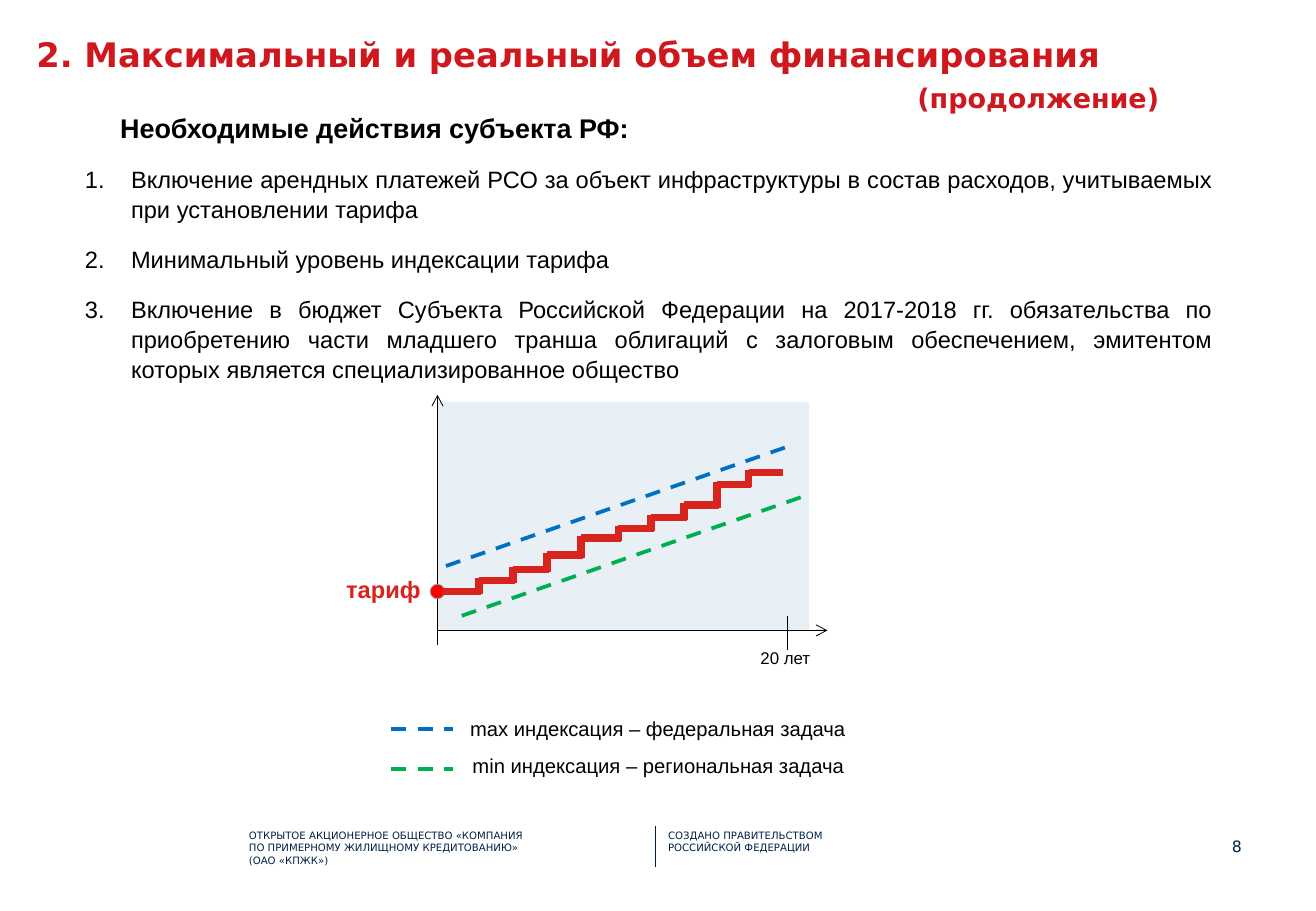
from dataclasses import dataclass

from lxml import etree
from pptx import Presentation
from pptx import util as u
from pptx.dml.color import RGBColor
from pptx.enum import dml, shapes, text
from pptx.oxml.ns import qn

SCALE = 9144  # EMU in one px


@dataclass(frozen=True)
class Theme:
    title: str = "CE181E"
    ink: str = "000000"
    footer: str = "002046"
    tariff: str = "D9231D"
    dot: str = "FF0000"
    dot_edge: str = "9B9EA3"
    plot: str = "DEEAF2"
    maximum: str = "0070C0"
    minimum: str = "00B050"
    body_font: str = "Arial"
    brand_font: str = "DejaVu Sans"
    title_size: int = 20
    heading_size: int = 16
    body_size: int = 14
    legend_size: int = 12
    label_size: int = 10
    footer_size: int = 6
    thin: float = 0.5
    dashed: float = 2.25
    thick: float = 4.5


THEME = Theme()


def px(value):
    return u.Emu(value * SCALE)


def add_box(page, x, y, width, height, inset=True):
    box = page.shapes.add_textbox(px(x), px(y), px(width), px(height))
    frame = box.text_frame
    frame.word_wrap = True
    if not inset:
        frame.margin_left = frame.margin_right = 0
        frame.margin_top = frame.margin_bottom = 0
    return frame


def add_span(para, words, size, color=THEME.ink, font=THEME.body_font, bold=False):
    span = para.add_run()
    span.text = words
    span.font.size = u.Pt(size)
    span.font.name = font
    span.font.bold = bold
    span.font.color.rgb = RGBColor.from_string(color)
    return span


def add_label(page, x, y, width, height, words, size, **style):
    para = add_box(page, x, y, width, height).paragraphs[0]
    add_span(para, words, size, **style)
    return para


def add_line(page, start, end, color, weight, dashed=False, arrow=False):
    line = page.shapes.add_connector(
        shapes.MSO_CONNECTOR.STRAIGHT, *map(px, (*start, *end)))
    line.line.color.rgb = RGBColor.from_string(color)
    line.line.width = u.Pt(weight)
    if dashed:
        line.line.dash_style = dml.MSO_LINE.DASH
    if arrow:
        etree.SubElement(line.line._get_or_add_ln(), qn("a:tailEnd"), type="arrow")
    etree.SubElement(line._element.spPr, qn("a:effectLst"))


def add_title(page, x, y, width, height):
    frame = add_box(page, x, y, width, height, inset=False)
    style = dict(color=THEME.title, font=THEME.brand_font, bold=True)
    add_span(frame.paragraphs[0], "2. Максимальный и реальный объем финансирования",
             THEME.title_size, **style)
    para = frame.add_paragraph()
    para.alignment = text.PP_ALIGN.RIGHT
    para.space_before = u.Pt(4)
    add_span(para, "(продолжение)", THEME.heading_size, **style)


def add_actions(page, x, y, width, height):
    add_label(page, x + 29, y, 671, 37, "Необходимые действия субъекта РФ:",
              THEME.heading_size, bold=True)
    actions = (
        "Включение арендных платежей РСО за объект инфраструктуры в состав "
        "расходов, учитываемых при установлении тарифа",
        "Минимальный уровень индексации тарифа",
        "Включение в бюджет Субъекта Российской Федерации на 2017-2018 гг. "
        "обязательства по приобретению части младшего транша облигаций с залоговым "
        "обеспечением, эмитентом которых является специализированное общество",
    )
    frame = add_box(page, x, y + 43, width, height - 43)
    for index, action in enumerate(actions):
        para = frame.add_paragraph() if index else frame.paragraphs[0]
        props = para._p.get_or_add_pPr()
        props.set("marL", str(px(38)))
        props.set("indent", str(-px(38)))
        etree.SubElement(props, qn("a:buFont"), typeface="+mj-lt")
        etree.SubElement(props, qn("a:buAutoNum"), type="arabicPeriod")
        para.alignment = text.PP_ALIGN.JUSTIFY
        para.line_spacing = 1.05
        para.space_before = u.Pt(6 if index else 0)
        para.space_after = u.Pt(6)
        add_span(para, action, THEME.body_size)


def add_steps(page, x, y):
    """Draw the tariff staircase: one tread per level, one riser between levels."""
    levels = (156, 147, 138, 126, 112, 104, 95, 85, 68, 58)
    edges = (4, 34, 62, 90, 118, 149, 176, 203, 230, 256, 284)
    overlap = 2
    for index, level in enumerate(levels):
        left, right = x + edges[index], x + edges[index + 1]
        last = index == len(levels) - 1
        add_line(page, (left, y + level), (right + (0 if last else overlap), y + level),
                 THEME.tariff, THEME.thick)
        if not last:
            add_line(page, (right, y + levels[index + 1] - overlap),
                     (right, y + level + overlap), THEME.tariff, THEME.thick)


def add_plain_shape(page, kind, x, y, width, height, color):
    shape = page.shapes.add_shape(kind, px(x), px(y), px(width), px(height))
    shape.shadow.inherit = False
    shape.fill.solid()
    shape.fill.fore_color.rgb = RGBColor.from_string(color)
    shape.line.fill.background()
    return shape


def add_tariff_plot(page, x, y, width, height):
    bottom = y + height
    area = add_plain_shape(page, shapes.MSO_SHAPE.RECTANGLE, x, y, width, height, THEME.plot)
    color = area._element.spPr.find(qn("a:solidFill"))[0]
    etree.SubElement(color, qn("a:alpha"), val="67000")

    add_line(page, (x, bottom), (x + 321, bottom), THEME.ink, THEME.thin, arrow=True)
    add_line(page, (x, bottom + 12), (x, y - 6), THEME.ink, THEME.thin, arrow=True)
    add_line(page, (x + 288, bottom - 12), (x + 288, bottom + 16), THEME.ink, THEME.thin)
    add_label(page, x + 256, bottom + 9, 68, 27, "20 лет", THEME.label_size)

    dot = add_plain_shape(page, shapes.MSO_SHAPE.OVAL, x - 6, y + 150, 12, 12, THEME.dot)
    dot.line.color.rgb = RGBColor.from_string(THEME.dot_edge)
    dot.line.width = u.Pt(THEME.thin)
    add_steps(page, x, y)
    for left, top, color in ((20, 176, THEME.minimum), (7, 135, THEME.maximum)):
        add_line(page, (x + left, y + top), (x + left + 286, y + top - 100),
                 color, THEME.dashed, dashed=True)
    add_label(page, x - 85, y + 137, 95, 34, "тариф", THEME.body_size,
              color=THEME.tariff, bold=True)


def add_legend(page, x, y):
    entries = (
        (0, 55, 15, "max индексация – федеральная задача", THEME.maximum),
        (30, 57, 18, "min индексация – региональная задача", THEME.minimum),
    )
    for top, indent, middle, words, color in entries:
        add_label(page, x + indent, y + top, 346, 30, words, THEME.legend_size)
        add_line(page, (x, y + top + middle), (x + 51, y + top + middle),
                 color, THEME.dashed, dashed=True)


def add_footer(page, x, y):
    style = dict(color=THEME.footer, font=THEME.brand_font)
    notes = (
        (0, 245, 42, "ОТКРЫТОЕ АКЦИОНЕРНОЕ ОБЩЕСТВО «КОМПАНИЯ ПО ПРИМЕРНОМУ "
                     "ЖИЛИЩНОМУ КРЕДИТОВАНИЮ» (ОАО «КПЖК»)"),
        (345, 196, 31, "СОЗДАНО ПРАВИТЕЛЬСТВОМ РОССИЙСКОЙ ФЕДЕРАЦИИ"),
    )
    for left, width, height, words in notes:
        para = add_label(page, x + left, y, width, height, words,
                         THEME.footer_size, **style)
        para.line_spacing = 1.05
    add_line(page, (x + 344, y + 3), (x + 344, y + 37), THEME.footer, THEME.thin)
    para = add_box(page, x + 773, y + 9, 54, 27, inset=False).paragraphs[0]
    para.alignment = text.PP_ALIGN.RIGHT
    number = add_span(para, "8", THEME.heading_size, **style)
    number.font._element.set("baseline", "30000")


def main():
    deck = Presentation()
    deck.slide_width, deck.slide_height = px(1083), px(750)
    page = deck.slides.add_slide(deck.slide_layouts[6])
    add_footer(page, 195, 677)
    add_title(page, 30, 28, 924, 74)
    add_actions(page, 60, 87, 948, 269)
    add_tariff_plot(page, 360, 331, 306, 188)
    add_legend(page, 322, 585)
    deck.save("out.pptx")


if __name__ == "__main__":
    main()
